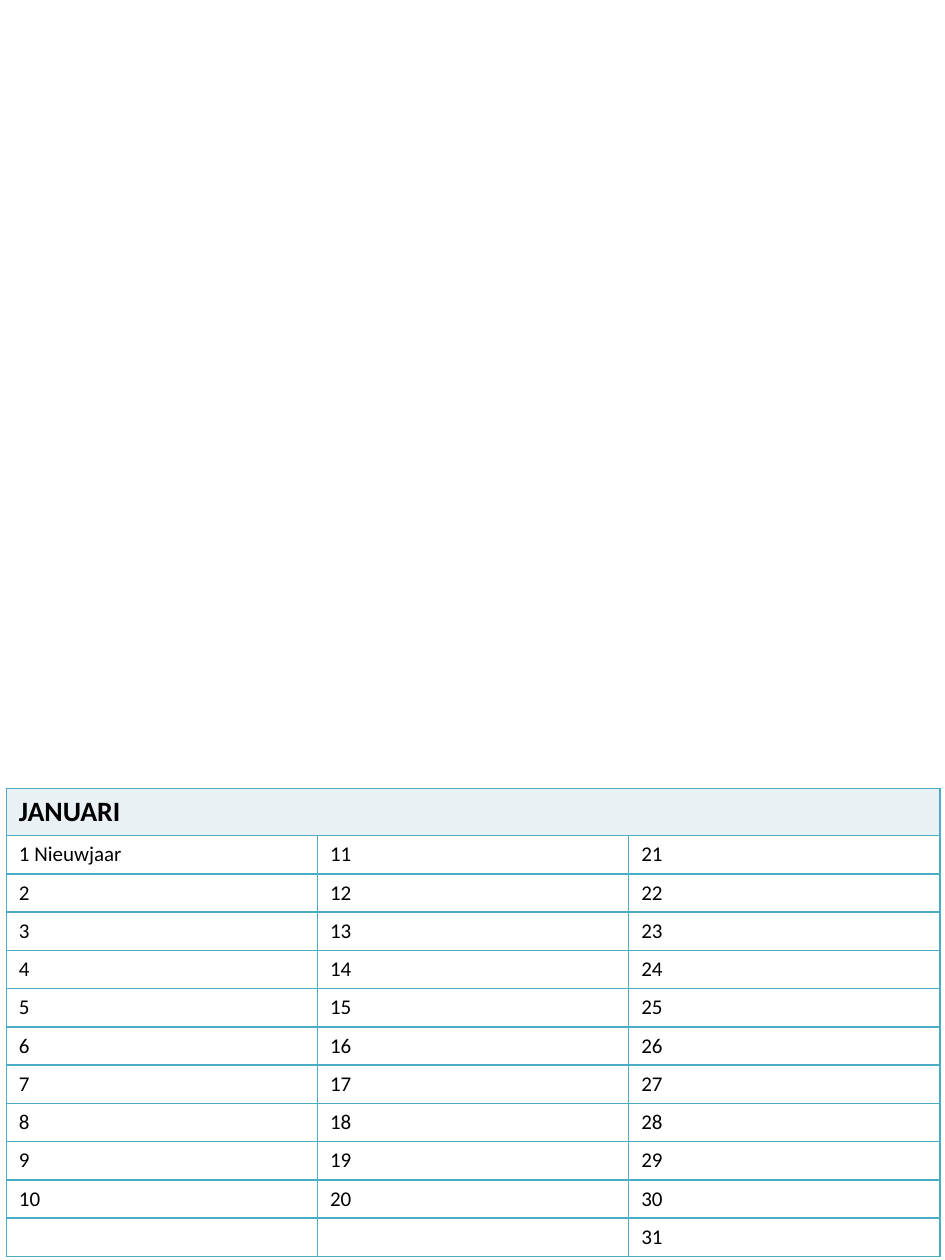
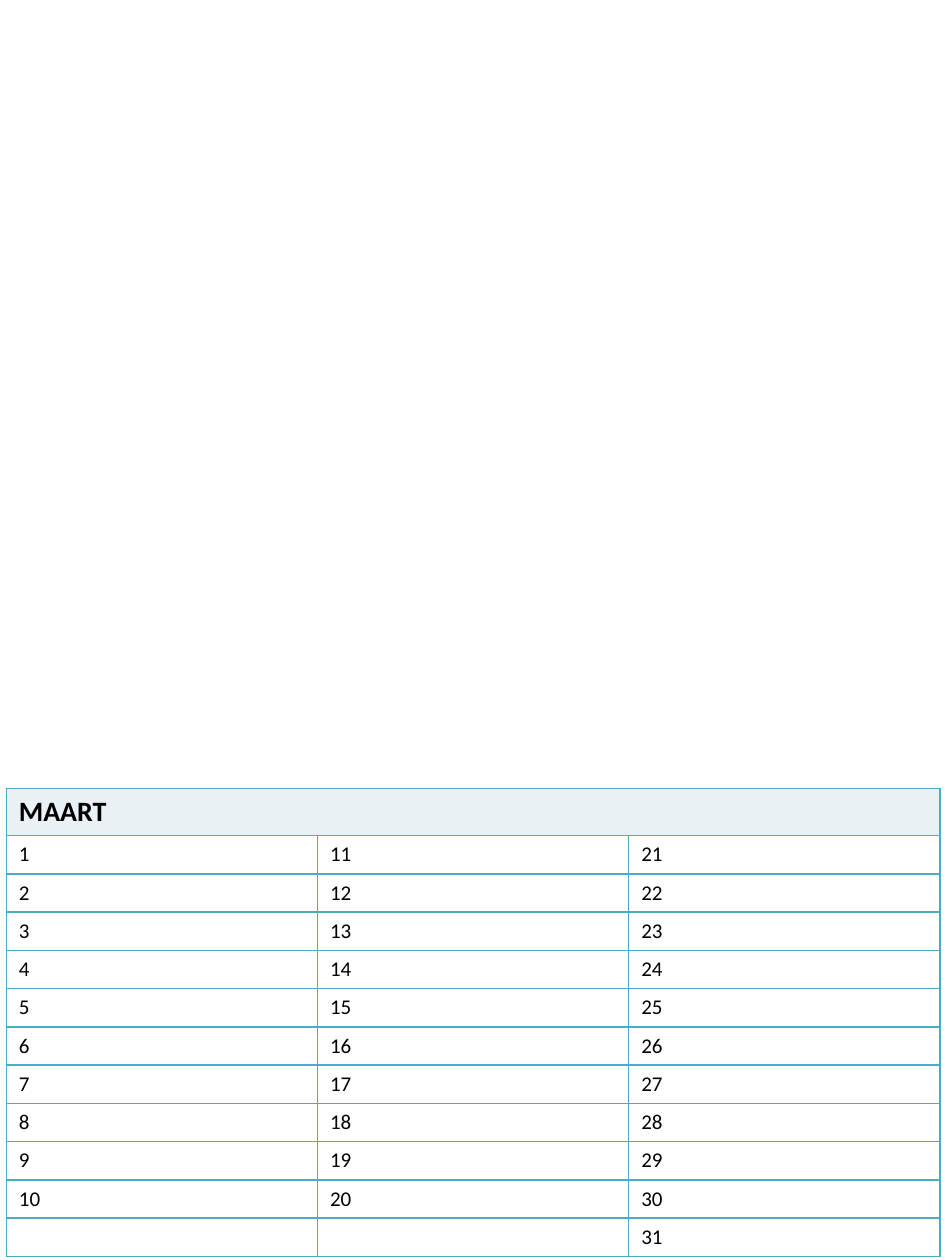
from lxml.etree import SubElement
from pptx import Presentation
from pptx.dml.color import RGBColor
from pptx.enum.text import MSO_ANCHOR
from pptx.oxml.ns import qn
from pptx.util import Inches, Pt

BORDER = RGBColor(0x4B, 0xAC, 0xC6)
HEADER_FILL = RGBColor(0xE9, 0xF1, 0xF5)
WHITE = RGBColor(0xFF, 0xFF, 0xFF)
BLACK = RGBColor(0x00, 0x00, 0x00)
FONT = "Calibri"

DAYS_PER_COLUMN = 10
COLUMNS = 3
ROWS = DAYS_PER_COLUMN + 2  # month name, ten days, day 31
HEADER_HEIGHT, DAY_HEIGHT = Inches(0.37), Inches(0.3)
MONTHS = [("JANUARI", {1: "Nieuwjaar"}), ("MAART", {})]


def add_borders(cell):
    cell_properties = cell._tc.get_or_add_tcPr()
    for side in ("a:lnL", "a:lnR", "a:lnT", "a:lnB"):
        line = SubElement(cell_properties, qn(side), w=str(Pt(1)))
        line_fill = SubElement(line, qn("a:solidFill"))
        SubElement(line_fill, qn("a:srgbClr"), val=str(BORDER))


def write_cell(cell, text, size, fill, bold=False):
    add_borders(cell)
    cell.fill.solid()
    cell.fill.fore_color.rgb = fill
    cell.vertical_anchor = MSO_ANCHOR.TOP
    cell.text_frame.text = text
    paragraph = cell.text_frame.paragraphs[0]
    for run in paragraph.runs:
        run.font.name = FONT
        run.font.size = Pt(size)
        run.font.bold = bold
        run.font.color.rgb = BLACK
    # Keeps rows with empty cells as low as the others
    SubElement(paragraph._p, qn("a:endParaRPr"), sz=str(size * 100))


calendar = Presentation()
calendar.slide_width, calendar.slide_height = Inches(7.5), Inches(10)

for month, holidays in MONTHS:
    slide = calendar.slides.add_slide(calendar.slide_layouts[6])
    days = slide.shapes.add_table(
        ROWS, COLUMNS, Inches(0.05), Inches(6.26), Inches(7.41),
        HEADER_HEIGHT + (ROWS - 1) * DAY_HEIGHT).table
    days.horz_banding = False
    for column in days.columns:
        column.width = Inches(2.47)
    for row in days.rows:
        row.height = DAY_HEIGHT

    # Month name across all columns
    days.rows[0].height = HEADER_HEIGHT
    for column in range(COLUMNS):
        write_cell(days.cell(0, column), "" if column else month, 16, HEADER_FILL, bold=True)
    days.cell(0, 0).merge(days.cell(0, COLUMNS - 1))

    # Days run down each column; only the last column holds an eleventh
    for column in range(COLUMNS):
        for row in range(1, ROWS):
            day = column * DAYS_PER_COLUMN + row
            label = f"{day} {holidays[day]}" if day in holidays else str(day)
            if row > DAYS_PER_COLUMN and column < COLUMNS - 1:
                label = ""
            write_cell(days.cell(row, column), label, 12, WHITE)

calendar.save("out.pptx")
